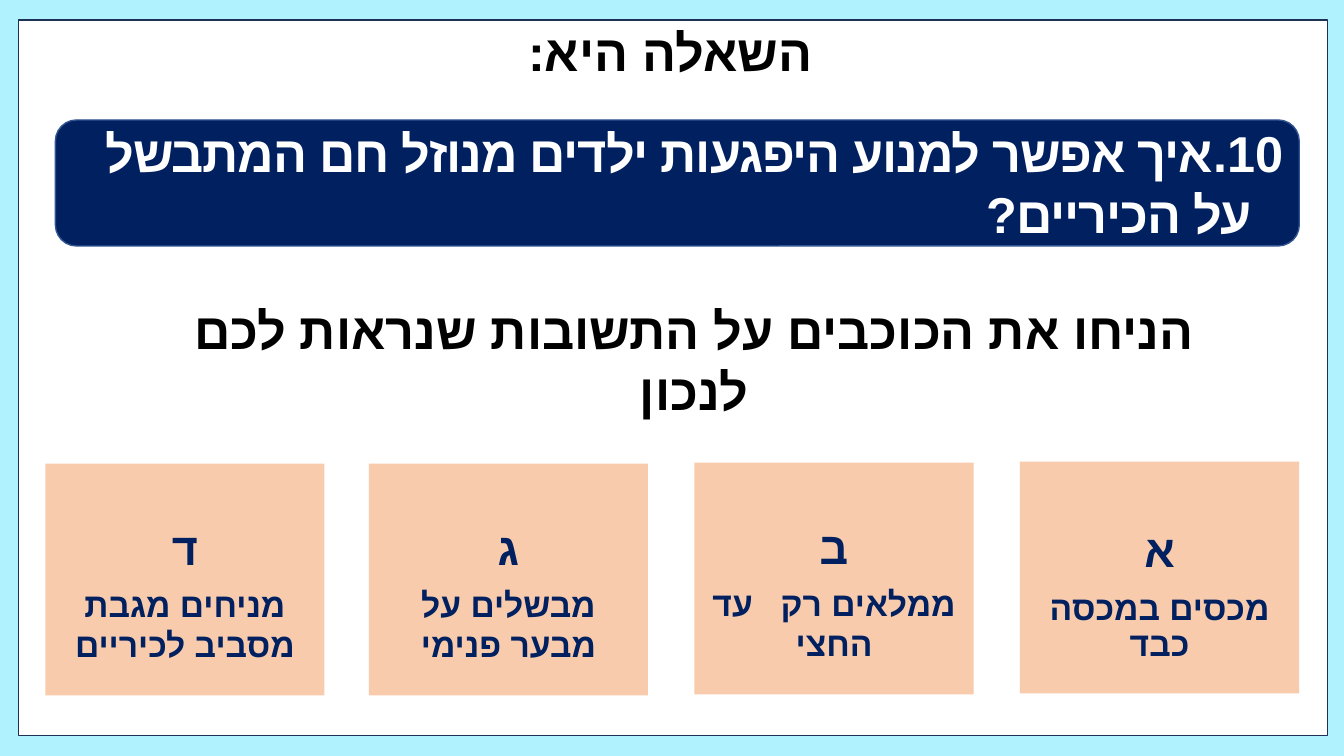
from dataclasses import dataclass
from typing import Optional

import pptx
import pptx.dml.color
import pptx.enum.shapes
import pptx.enum.text
import pptx.oxml.ns
import pptx.util
from lxml import etree

Pt = pptx.util.Pt
ALIGN = pptx.enum.text.PP_ALIGN
ANCHOR = pptx.enum.text.MSO_ANCHOR
SHAPE = pptx.enum.shapes.MSO_SHAPE
NAVY = "002060"
WHITE = "FFFFFF"
BLACK = "000000"
PEACH = "F8CBAD"
SLIDE_WIDTH, SLIDE_HEIGHT = 960, 540
CARD_WIDTH, CARD_HEIGHT = 199.4, 165.6


@dataclass
class TextStyle:
    size: float
    color: str
    font: str = "Arial"
    spacing: Optional[float] = None


@dataclass
class AnswerCard:
    left: float
    top: float
    letter: str
    answer: list[str]
    top_inset: float = 41
    answer_gap: float = 6.4
    line_spacing: float = 1.0


HEADING = TextStyle(36, BLACK)
QUESTION = TextStyle(36, WHITE, "Roboto", -0.8)
LETTER = TextStyle(32, NAVY, "Roboto")
ANSWER = TextStyle(24, NAVY)
WIDE_SPACE = TextStyle(24, NAVY, spacing=13.3)

CARDS = [
    AnswerCard(728.6, 329.8, "א", ["מכסים במכסה כבד"], 48, 10, 0.9),
    AnswerCard(496.1, 330.5, "ב", ["ממלאים רק", "עד החצי"]),
    AnswerCard(263.5, 331.2, "ג", ["מבשלים על מבער פנימי"]),
    AnswerCard(32.4, 331.2, "ד", ["מניחים מגבת מסביב לכיריים"]),
]


def rgb(color: str) -> pptx.dml.color.RGBColor:
    return pptx.dml.color.RGBColor.from_string(color)


def add_child(parent, tag: str, **attributes: str):
    child = etree.SubElement(parent, pptx.oxml.ns.qn(tag))
    for name, value in attributes.items():
        child.set(name, value)
    return child


def add_box(slide, kind, left: float, top: float, width: float, height: float,
            fill: str, line: Optional[str] = None):
    shape = slide.shapes.add_shape(kind, Pt(left), Pt(top), Pt(width), Pt(height))
    shape.shadow.inherit = False
    shape.fill.solid()
    shape.fill.fore_color.rgb = rgb(fill)
    if line:
        shape.line.color.rgb = rgb(line)
        shape.line.width = Pt(1)
    else:
        shape.line.fill.background()
    return shape


def format_paragraph(paragraph, alignment=ALIGN.CENTER, line_spacing: float = 1.0,
                     space_before: float = 0):
    """Align a paragraph and make it read from right to left."""
    paragraph.alignment = alignment
    paragraph.line_spacing = line_spacing
    paragraph.space_before = Pt(space_before)
    properties = paragraph._p.get_or_add_pPr()
    properties.set("rtl", "1")
    return properties


def add_run(paragraph, text: str, style: TextStyle) -> None:
    run = paragraph.add_run()
    run.text = text
    run.font.size = Pt(style.size)
    run.font.bold = True
    run.font.name = style.font
    run.font.color.rgb = rgb(style.color)
    properties = run._r.get_or_add_rPr()
    properties.set("lang", "he-IL")
    if style.spacing is not None:
        properties.set("spc", str(round(style.spacing * 100)))
    add_child(properties, "a:cs", typeface="Arial")


def add_background(slide) -> None:
    backdrop = add_box(slide, SHAPE.RECTANGLE, 0, 0, SLIDE_WIDTH, SLIDE_HEIGHT, "87EEFF")
    color = backdrop.element.spPr.find(".//" + pptx.oxml.ns.qn("a:srgbClr"))
    add_child(color, "a:alpha", val="65000")
    add_box(slide, SHAPE.RECTANGLE, 13, 14.4, 935.3, 511.2, WHITE, "1E3256")


def add_title(slide) -> None:
    title = slide.shapes.title
    slide.shapes.element.append(title.element)
    title.left, title.top = Pt(41), Pt(13.7)
    title.width, title.height = Pt(875.5), Pt(51.1)
    title.text_frame.vertical_anchor = ANCHOR.MIDDLE
    paragraph = title.text_frame.paragraphs[0]
    format_paragraph(paragraph, line_spacing=0.9)
    add_run(paragraph, "השאלה היא:", HEADING)


def add_question(slide) -> None:
    banner = add_box(slide, SHAPE.ROUNDED_RECTANGLE, 39.6, 85.7, 888.5, 90, NAVY, "325491")
    banner.text_frame.word_wrap = True
    banner.text_frame.vertical_anchor = ANCHOR.MIDDLE
    paragraph = banner.text_frame.paragraphs[0]
    properties = format_paragraph(paragraph, ALIGN.RIGHT)
    properties.set("marL", str(Pt(22.3)))
    properties.set("indent", str(Pt(-58.3)))
    add_child(properties, "a:buFont", typeface="Arial")
    add_child(properties, "a:buAutoNum", type="arabicPeriod", startAt="10")
    add_run(paragraph, "איך אפשר למנוע היפגעות ילדים מנוזל חם המתבשל על הכיריים?", QUESTION)


def add_card(slide, card: AnswerCard) -> None:
    shape = add_box(slide, SHAPE.RECTANGLE, card.left, card.top,
                    CARD_WIDTH, CARD_HEIGHT, PEACH)
    frame = shape.text_frame
    frame.word_wrap = True
    frame.vertical_anchor = ANCHOR.TOP
    frame.margin_top = Pt(card.top_inset)
    letter = frame.paragraphs[0]
    format_paragraph(letter, line_spacing=card.line_spacing)
    add_run(letter, card.letter, LETTER)
    answer = frame.add_paragraph()
    format_paragraph(answer, line_spacing=card.line_spacing, space_before=card.answer_gap)
    for index, part in enumerate(card.answer):
        if index:
            add_run(answer, " ", WIDE_SPACE)
        add_run(answer, part, ANSWER)


def add_instruction(slide) -> None:
    box = slide.shapes.add_textbox(Pt(87.8), Pt(210.2), Pt(816.5), Pt(51.1))
    box.text_frame.word_wrap = True
    box.text_frame.auto_size = pptx.enum.text.MSO_AUTO_SIZE.SHAPE_TO_FIT_TEXT
    paragraph = box.text_frame.paragraphs[0]
    format_paragraph(paragraph)
    add_run(paragraph, "הניחו את הכוכבים על התשובות שנראות לכם לנכון", HEADING)


def main() -> None:
    presentation = pptx.Presentation()
    presentation.slide_width = Pt(SLIDE_WIDTH)
    presentation.slide_height = Pt(SLIDE_HEIGHT)
    slide = presentation.slides.add_slide(presentation.slide_layouts[5])
    add_background(slide)
    add_title(slide)
    add_question(slide)
    for card in CARDS:
        add_card(slide, card)
    add_instruction(slide)
    presentation.save("out.pptx")


if __name__ == "__main__":
    main()
